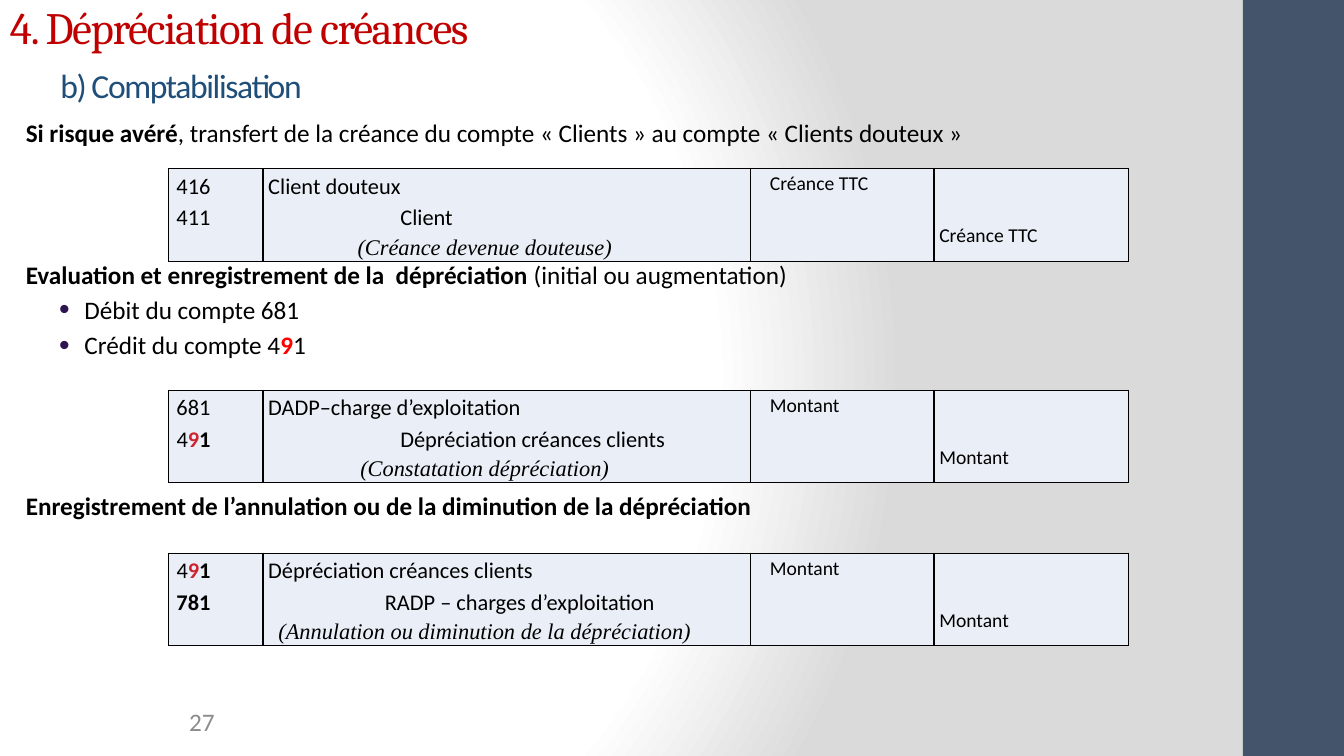
from lxml import etree
from pptx import Presentation
from pptx.dml.color import RGBColor
from pptx.enum.shapes import MSO_SHAPE
from pptx.enum.text import MSO_ANCHOR, PP_ALIGN
from pptx.oxml import parse_xml
from pptx.util import Cm, Pt

RECT, BRACKET = MSO_SHAPE.RECTANGLE, MSO_SHAPE.DOUBLE_BRACKET
TOP, MIDDLE, BOTTOM = MSO_ANCHOR.TOP, MSO_ANCHOR.MIDDLE, MSO_ANCHOR.BOTTOM
LEFT, CENTER = PP_ALIGN.LEFT, PP_ALIGN.CENTER

NS = "http://schemas.openxmlformats.org/drawingml/2006/main"
PNS = "http://schemas.openxmlformats.org/presentationml/2006/main"
COLORS = {
    "black": "000000", "white": "FFFFFF", "grey": "DADADA", "slate": "44546A",
    "number": "8C8C8C", "title": "C00000", "blue": "1F4E79", "red": "FF0000",
    "digit": "CE2430", "cell": "EAEFF7", "bullet": "2E1450",
}
BODY, SERIF, ITALIC = "Calibri", "Cambria", "Times New Roman"


def rgb(name):
    return RGBColor.from_string(COLORS[name])


def add(parent, tag, **attrs):
    return etree.SubElement(parent, f"{{{NS}}}{tag}", {k: str(v) for k, v in attrs.items()})


class Page:
    def __init__(self, deck):
        self.slide = deck.slides.add_slide(deck.slide_layouts[6])
        self.shapes = self.slide.shapes

    def backdrop(self):
        stops = "".join(
            f'<a:gs pos="{pos}"><a:srgbClr val="{COLORS[name]}"/></a:gs>'
            for pos, name in ((0, "white"), (75000, "white"), (100000, "grey")))
        base = parse_xml(
            f'<p:bg xmlns:p="{PNS}" xmlns:a="{NS}"><p:bgPr><a:gradFill rotWithShape="1">'
            f'<a:gsLst>{stops}</a:gsLst><a:path path="circle">'
            '<a:fillToRect l="20000" t="50000" r="100000" b="50000"/></a:path>'
            '</a:gradFill><a:effectLst/></p:bgPr></p:bg>')
        self.slide.element.cSld.insert(0, base)

    def shape(self, kind, box, fill=None, line=None):
        item = self.shapes.add_shape(kind, *map(Cm, box))
        item.shadow.inherit = False
        if fill:
            item.fill.solid()
            item.fill.fore_color.rgb = rgb(fill)
        else:
            item.fill.background()
        if line:
            item.line.color.rgb = rgb(line)
            item.line.width = Pt(1.5)
        else:
            item.line.fill.background()
        return item

    def box(self, box, anchor=TOP):
        frame = self.shapes.add_textbox(*map(Cm, box)).text_frame
        frame.word_wrap = True
        frame.vertical_anchor = anchor
        return frame

    def para(self, frame, runs, size, font=BODY, color="black", align=LEFT,
             left=0, hang=0, bullet=False, before=0, lines=None, italic=False):
        """Runs are a string or a list of (text, bold, color)."""
        fresh = not frame.paragraphs[0].runs
        para = frame.paragraphs[0] if fresh else frame.add_paragraph()
        para.alignment = align
        if before and not fresh:
            para.space_before = Pt(before)
        if lines:
            para.line_spacing = lines
        props = para._p.get_or_add_pPr()
        props.set("marL", str(Cm(left)))
        props.set("indent", str(Cm(hang)))
        if bullet:
            add(add(props, "buClr"), "srgbClr", val=COLORS["bullet"])
            add(props, "buSzPct", val=120000)
            add(props, "buFont", typeface="Arial")
            add(props, "buChar", char="•")
        para.font.size, para.font.name = Pt(size), font
        para.font.color.rgb = rgb(color)
        if italic:
            para.font.italic = True
        for text, bold, tint in [(runs, False, None)] if isinstance(runs, str) else runs:
            run = para.add_run()
            run.text = text
            if bold:
                run.font.bold = True
            if tint:
                run.font.color.rgb = rgb(tint)
        return para

    def cell(self, cell, right=0.13, bottom=0, anchor=TOP):
        cell.margin_left, cell.margin_right = Cm(0.13), Cm(right)
        cell.margin_top, cell.margin_bottom = 0, Cm(bottom)
        cell.vertical_anchor = anchor
        props = cell._tc.get_or_add_tcPr()
        for side in ("lnL", "lnR", "lnT", "lnB"):
            line = add(props, side, w=Pt(1))
            add(add(line, "solidFill"), "srgbClr", val=COLORS["black"])
        cell.fill.solid()
        cell.fill.fore_color.rgb = rgb("cell")
        return cell.text_frame

    def entry(self, top, codes, debit, credit, shift, note, amount):
        widths = (2.39, 12.29, 4.62, 4.9)
        table = self.shapes.add_table(
            1, 4, Cm(4.24), Cm(top), Cm(sum(widths)), Cm(2.33)).table
        table.first_row = table.horz_banding = False
        for col, width in zip(table.columns, widths):
            col.width = Cm(width)
        code, label, left, right = table.rows[0].cells
        frame = self.cell(code, right=1.25)
        for runs in codes:
            self.para(frame, runs, 16, align=CENTER, lines=1.15)
        frame = self.cell(label, right=1.25)
        self.para(frame, debit, 16, lines=1.15)
        self.para(frame, credit, 16, left=shift, lines=1.15)
        self.para(frame, note, 16, ITALIC, align=CENTER, lines=1.15, italic=True)
        self.para(self.cell(left), amount, 14, left=0.35, lines=1.15)
        frame = self.cell(right, bottom=0.34, anchor=BOTTOM)
        self.para(frame, amount, 14, lines=1.15)


def main():
    deck = Presentation()
    deck.slide_width, deck.slide_height = Cm(33.87), Cm(19.05)
    page = Page(deck)

    # Background, side band and page number
    page.backdrop()
    page.shape(RECT, (31.32, 0, 2.55, 19.05), fill="slate")
    mark = page.shape(BRACKET, (4.24, 17.58, 1.7, 1.22), line="white")
    mark.adjustments[0] = 0.18
    frame = mark.text_frame
    frame.margin_left = frame.margin_right = frame.margin_top = frame.margin_bottom = 0
    frame.vertical_anchor = MIDDLE
    page.para(frame, "27", 18, color="number", align=CENTER)

    # Section texts
    frame = page.box((0.1, 2.84, 30.96, 1.1))
    page.para(frame, [
        ("Si risque avéré", True, None),
        (", transfert de la créance du compte « Clients » au compte « Clients douteux »",
         False, None)], 18, left=0.3)
    frame = page.box((0.1, 6.4, 30.96, 2.9))
    page.para(frame, [
        ("Evaluation et enregistrement de la  dépréciation ", True, None),
        ("(initial ou augmentation)", False, None)], 18, left=0.3)
    for runs in ("Débit du compte 681",
                 [("Crédit du compte 4", False, None), ("9", True, "red"), ("1", False, None)]):
        page.para(frame, runs, 18, left=1.78, hang=-0.64, bullet=True, before=3.6)
    frame = page.box((0.1, 12.24, 30.96, 1.1))
    page.para(frame, [(
        "Enregistrement de l’annulation ou de la diminution de la dépréciation",
        True, None)], 18, left=0.3)

    # Journal entries
    loss = [("4", False, None), ("9", True, "digit"), ("1", True, None)]
    page.entry(4.25, ("416", "411"), "Client douteux", "Client", 3.33,
               "(Créance devenue douteuse)", "Créance TTC")
    page.entry(9.83, ("681", loss), "DADP–charge d’exploitation",
               "Dépréciation créances clients", 3.33,
               "(Constatation dépréciation)", "Montant")
    page.entry(13.94, (loss, [("781", True, None)]), "Dépréciation créances clients",
               "RADP – charges d’exploitation", 2.94,
               "(Annulation ou diminution de la dépréciation)", "Montant")

    # Title and subtitle
    frame = page.box((0, 0.56, 28.45, 1.6), MIDDLE)
    title = page.para(frame, "4. Dépréciation de créances", 32, SERIF, "title")
    part = page.para(frame, [("\t", False, None), ("b) Comptabilisation", False, "blue")],
                     32, SERIF, "title")
    part.runs[1].font.size, part.runs[1].font.name = Pt(24), BODY
    for run in title.runs + part.runs:
        run._r.get_or_add_rPr().set("spc", "-100")

    deck.save("out.pptx")


if __name__ == "__main__":
    main()
